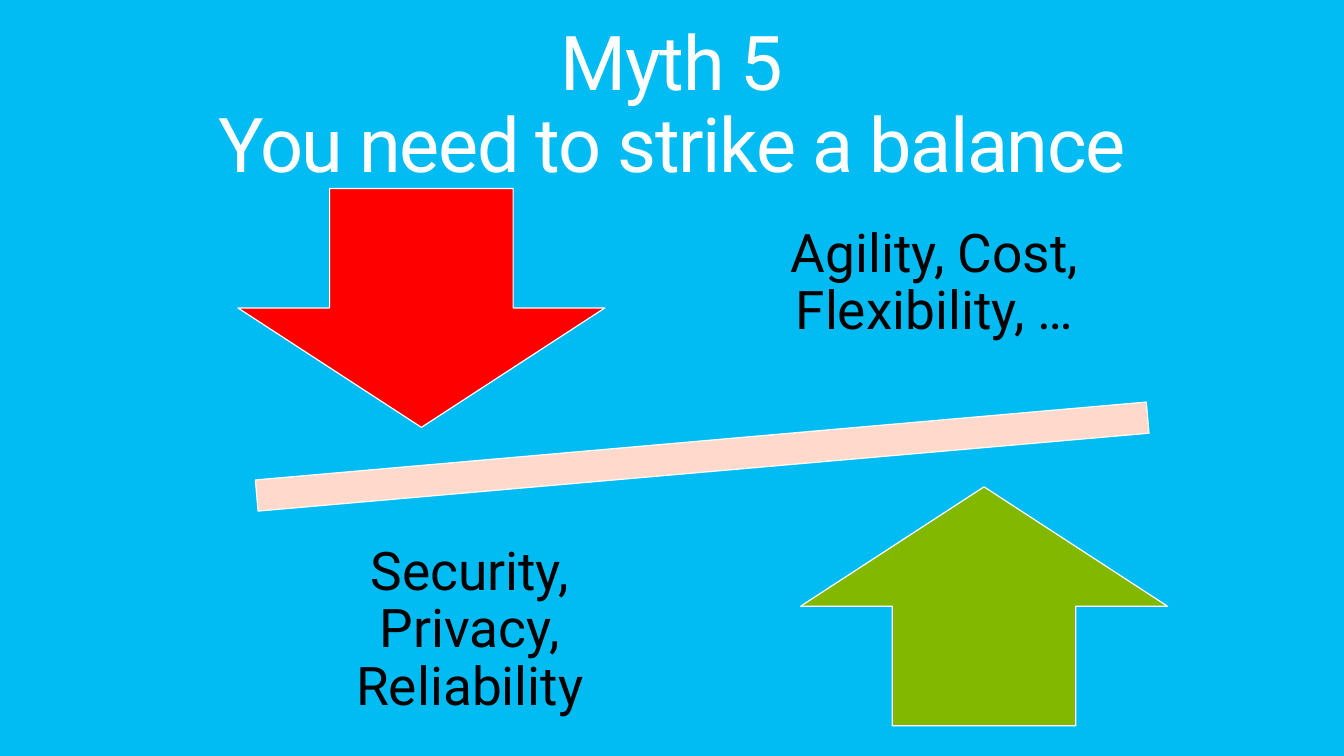
from pptx import Presentation
from pptx.dml.color import RGBColor
from pptx.enum.shapes import MSO_SHAPE
from pptx.enum.text import MSO_ANCHOR, PP_ALIGN
from pptx.util import Inches, Pt

SKY = RGBColor(0x00, 0xBC, 0xF2)
WHITE = RGBColor(0xFF, 0xFF, 0xFF)
BLACK = RGBColor(0x00, 0x00, 0x00)
PEACH = RGBColor(0xFF, 0xDA, 0xCC)
RED = RGBColor(0xFF, 0x00, 0x00)
GREEN = RGBColor(0x83, 0xB8, 0x00)


def add_text(slide, text, box, size=38, color=BLACK, inset=0.3,
             anchor=MSO_ANCHOR.MIDDLE, spacing=0):
    """Add a centred text box; spacing is in points between letters."""
    frame = slide.shapes.add_textbox(*map(Inches, box)).text_frame
    frame.word_wrap = True
    frame.vertical_anchor = anchor
    frame.margin_left = frame.margin_right = Inches(inset)
    frame.margin_top = frame.margin_bottom = Inches(inset)
    para = frame.paragraphs[0]
    para.text = text
    para.alignment = PP_ALIGN.CENTER
    para.line_spacing = 0.9
    for run in para.runs:
        run.font.name = "Roboto"
        run.font.size = Pt(size)
        run.font.color.rgb = color
        if spacing:
            run.font._element.set("spc", str(spacing * 100))


def add_shape(slide, kind, box, color, turn=0):
    """Add a filled preset shape with a thin white outline."""
    shape = slide.shapes.add_shape(kind, *map(Inches, box))
    shape.shadow.inherit = False
    shape.fill.solid()
    shape.fill.fore_color.rgb = color
    shape.line.color.rgb = WHITE
    shape.line.width = Pt(0.85)
    shape.rotation = turn


def main():
    """Build the slide and save it."""
    deck = Presentation()
    deck.slide_width = Inches(13.33)
    deck.slide_height = Inches(7.5)
    slide = deck.slides.add_slide(deck.slide_layouts[6])
    slide.background.fill.solid()
    slide.background.fill.fore_color.rgb = SKY

    add_text(slide, "Myth 5\vYou need to strike a balance", (0.57, 0.25, 12.19, 1.64),
             size=54, color=WHITE, inset=0, anchor=MSO_ANCHOR.TOP, spacing=-1)
    add_shape(slide, MSO_SHAPE.MATH_MINUS, (0.93, 3.87, 12.07, 1.32), PEACH, turn=355)
    add_shape(slide, MSO_SHAPE.DOWN_ARROW, (2.36, 1.87, 3.64, 2.37), RED)
    add_text(slide, "Agility, Cost, Flexibility, …", (7.33, 1.57, 3.88, 2.49))
    add_shape(slide, MSO_SHAPE.UP_ARROW, (7.94, 4.83, 3.64, 2.37), GREEN)
    add_text(slide, "Security, Privacy, Reliability", (2.72, 5.01, 3.88, 2.49))
    deck.save("out.pptx")


if __name__ == "__main__":
    main()
